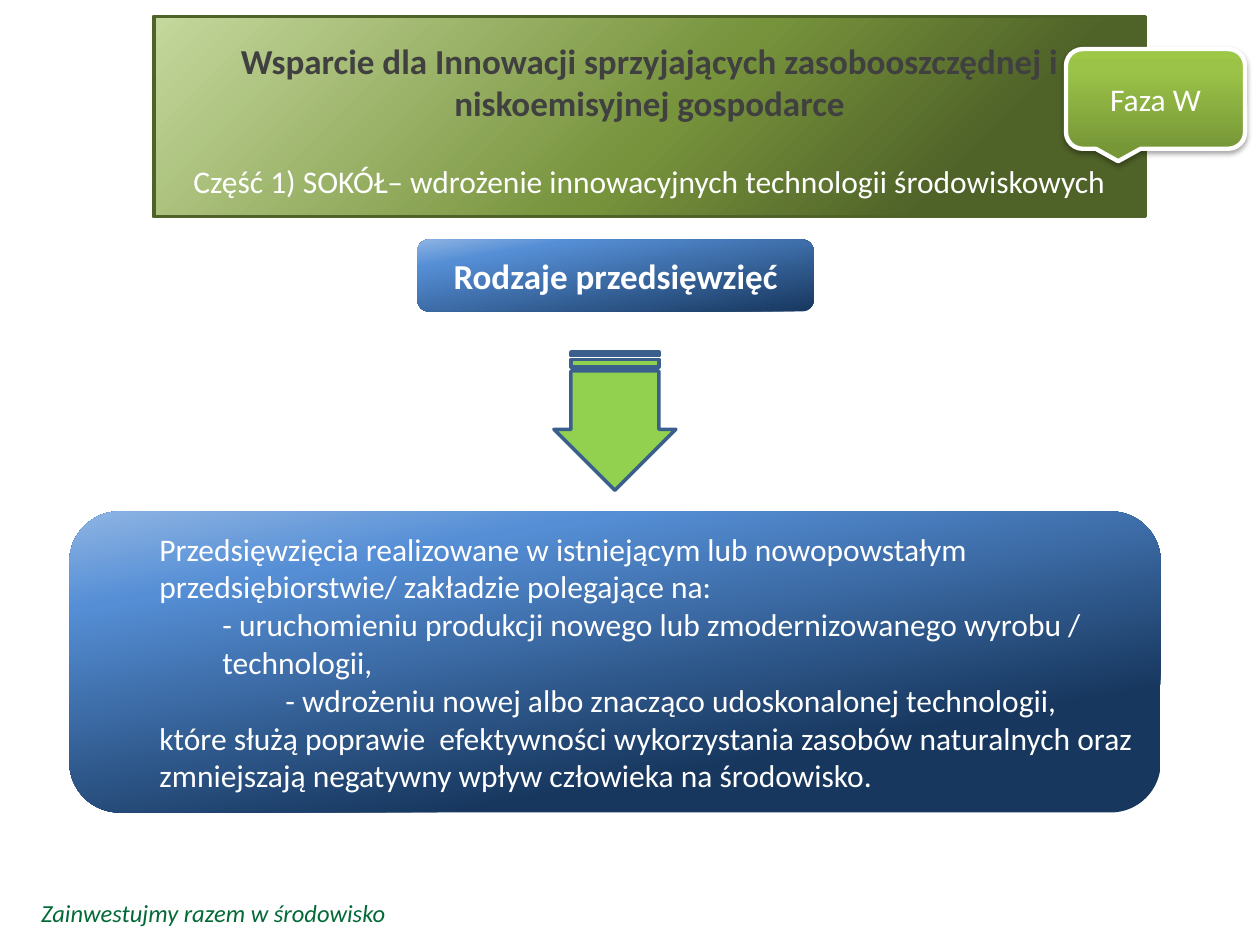
from lxml import etree
from pptx import Presentation
from pptx.dml.color import RGBColor
from pptx.enum.shapes import MSO_SHAPE
from pptx.enum.text import MSO_ANCHOR, MSO_AUTO_SIZE, PP_ALIGN
from pptx.oxml import parse_xml
from pptx.oxml.ns import nsdecls, qn
from pptx.util import Cm, Pt

ROUND = MSO_SHAPE.ROUNDED_RECTANGLE
STRIPED = MSO_SHAPE.STRIPED_RIGHT_ARROW
CALLOUT = MSO_SHAPE.ROUNDED_RECTANGULAR_CALLOUT
MIDDLE = MSO_ANCHOR.MIDDLE
FIXED = MSO_AUTO_SIZE.NONE
LEFT, CENTER = PP_ALIGN.LEFT, PP_ALIGN.CENTER


class Theme:
    font = "Calibri"
    white, gray, green = "FFFFFF", "404040", "026937"
    lime, steel, olive = "92D050", "3A5F8C", "4F6228"
    blue = [(0, "17375E"), (80, "558ED5"), (100, "8EB4E3")]
    deep = [(25, "17375E"), (80, "558ED5"), (100, "8EB4E3")]
    moss = [(19, "4F6228"), (48, "77933C"), (99, "C3D69B")]
    leaf = [(0, "779737"), (80, "9BC348"), (100, "9DC746")]
    head, body, foot = 20, 18, 14


def shade(shape, stops, angle):
    marks = "".join(
        f'<a:gs pos="{pos * 1000}"><a:srgbClr val="{tone}"/></a:gs>' for pos, tone in stops
    )
    grad = parse_xml(
        f'<a:gradFill {nsdecls("a")} rotWithShape="1"><a:gsLst>{marks}</a:gsLst>'
        f'<a:lin ang="{angle * 60000}" scaled="0"/></a:gradFill>'
    )
    shape._element.spPr.find(qn("a:prstGeom")).addnext(grad)


def write(para, text, size, color, align=LEFT, bold=False, italic=False):
    para.alignment = align
    run = para.add_run()
    run.text = text
    font = run.font
    font.name, font.size = Theme.font, Pt(size)
    font.bold, font.italic = bold, italic
    font.color.rgb = RGBColor.from_string(color)


deck = Presentation()
deck.slide_width, deck.slide_height = Cm(25.4), Cm(19.05)
slide = deck.slides.add_slide(deck.slide_layouts[5])
shapes = slide.shapes

title = shapes.title
title.left, title.top, title.width, title.height = Cm(3.1), Cm(0.33), Cm(19.99), Cm(4.04)
geom = parse_xml(f'<a:prstGeom {nsdecls("a")} prst="roundRect"><a:avLst/></a:prstGeom>')
title._element.spPr.find(qn("a:xfrm")).addnext(geom)
shade(title, Theme.moss, 225)
title.line.color.rgb = RGBColor.from_string(Theme.olive)
title.line.width = Pt(2)
frame = title.text_frame
frame.word_wrap, frame.auto_size, frame.vertical_anchor = True, FIXED, MIDDLE
frame.margin_top = Cm(0.25)
write(frame.paragraphs[0],
      "Wsparcie dla Innowacji sprzyjających zasobooszczędnej i niskoemisyjnej gospodarce",
      Theme.head, Theme.gray, CENTER, bold=True)
para = frame.add_paragraph()
para.space_before = Pt(22)
write(para, "Część 1) SOKÓŁ– wdrożenie innowacyjnych technologii środowiskowych",
      Theme.body, Theme.white, CENTER)

label = shapes.add_shape(ROUND, Cm(8.41), Cm(4.83), Cm(8), Cm(1.45))
panel = shapes.add_shape(ROUND, Cm(1.4), Cm(10.31), Cm(22), Cm(6.07))
arrow = shapes.add_shape(STRIPED, Cm(11), Cm(7.26), Cm(2.79), Cm(2.46))
badge = shapes.add_shape(CALLOUT, Cm(21.49), Cm(0.99), Cm(3.61), Cm(2.01))

for shape in (label, panel, arrow, badge):
    shape.shadow.inherit = False
    shape.text_frame.word_wrap = True
    shape.text_frame.vertical_anchor = MIDDLE

for shape, stops, angle in (
    (label, Theme.blue, 260), (panel, Theme.deep, 260), (badge, Theme.leaf, 270),
):
    shade(shape, stops, angle)

for shape in (label, panel):
    shape.line.fill.background()

for shape, color, width in ((arrow, Theme.steel, 2), (badge, Theme.white, 2.5)):
    shape.line.color.rgb = RGBColor.from_string(color)
    shape.line.width = Pt(width)

arrow.rotation = 90
arrow.adjustments[0] = 0.72
arrow.fill.solid()
arrow.fill.fore_color.rgb = RGBColor.from_string(Theme.lime)

glow = etree.SubElement(
    badge._element.spPr.find(qn("a:effectLst")), qn("a:outerShdw"),
    blurRad=str(Pt(3.1)), dist=str(Pt(1.8)), dir="5400000", rotWithShape="0")
black = etree.SubElement(glow, qn("a:srgbClr"), val="000000")
etree.SubElement(black, qn("a:alpha"), val="35000")

write(label.text_frame.paragraphs[0], "Rodzaje przedsięwzięć",
      Theme.head, Theme.white, CENTER, bold=True)
write(badge.text_frame.paragraphs[0], "Faza W", Theme.body, Theme.white, CENTER)

frame = panel.text_frame
lines = [
    (1, "Przedsięwzięcia realizowane w istniejącym lub nowopowstałym "
        "przedsiębiorstwie/ zakładzie polegające na:"),
    (2, "- uruchomieniu produkcji nowego lub zmodernizowanego wyrobu / technologii,"),
    (3, "- wdrożeniu nowej albo znacząco udoskonalonej technologii,"),
    (1, "które służą poprawie  efektywności wykorzystania zasobów naturalnych oraz "
        "zmniejszają negatywny wpływ człowieka na środowisko."),
]
for i, (step, text) in enumerate(lines):
    para = frame.add_paragraph() if i else frame.paragraphs[0]
    para._p.get_or_add_pPr().set("marL", str(Cm(1.27) * step))
    write(para, text, Theme.body, Theme.white)

foot = shapes.add_textbox(Cm(0.58), Cm(17.98), Cm(10.72), Cm(0.86))
foot.text_frame.word_wrap = True
write(foot.text_frame.paragraphs[0], "Zainwestujmy razem w środowisko",
      Theme.foot, Theme.green, italic=True)

deck.save("out.pptx")
